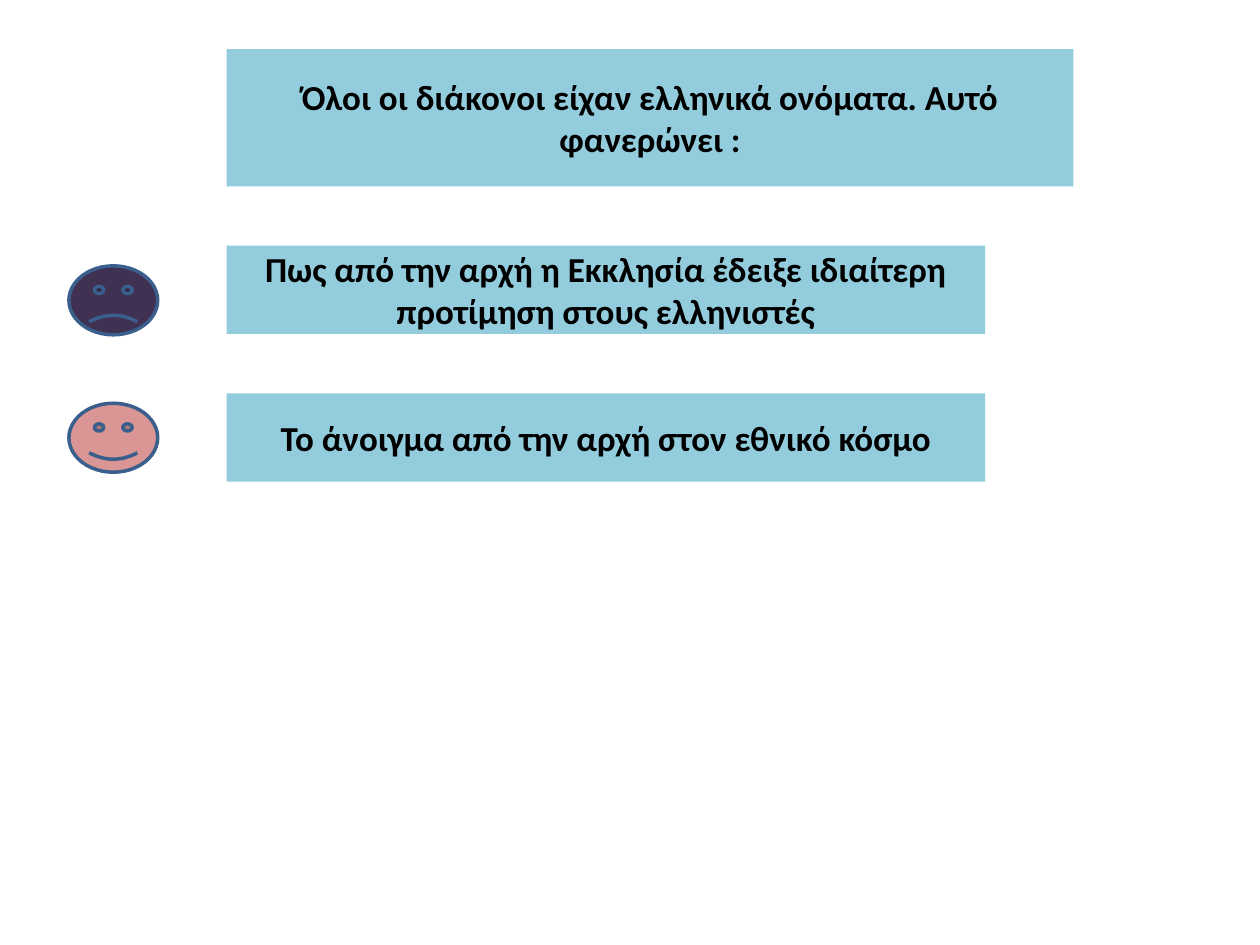
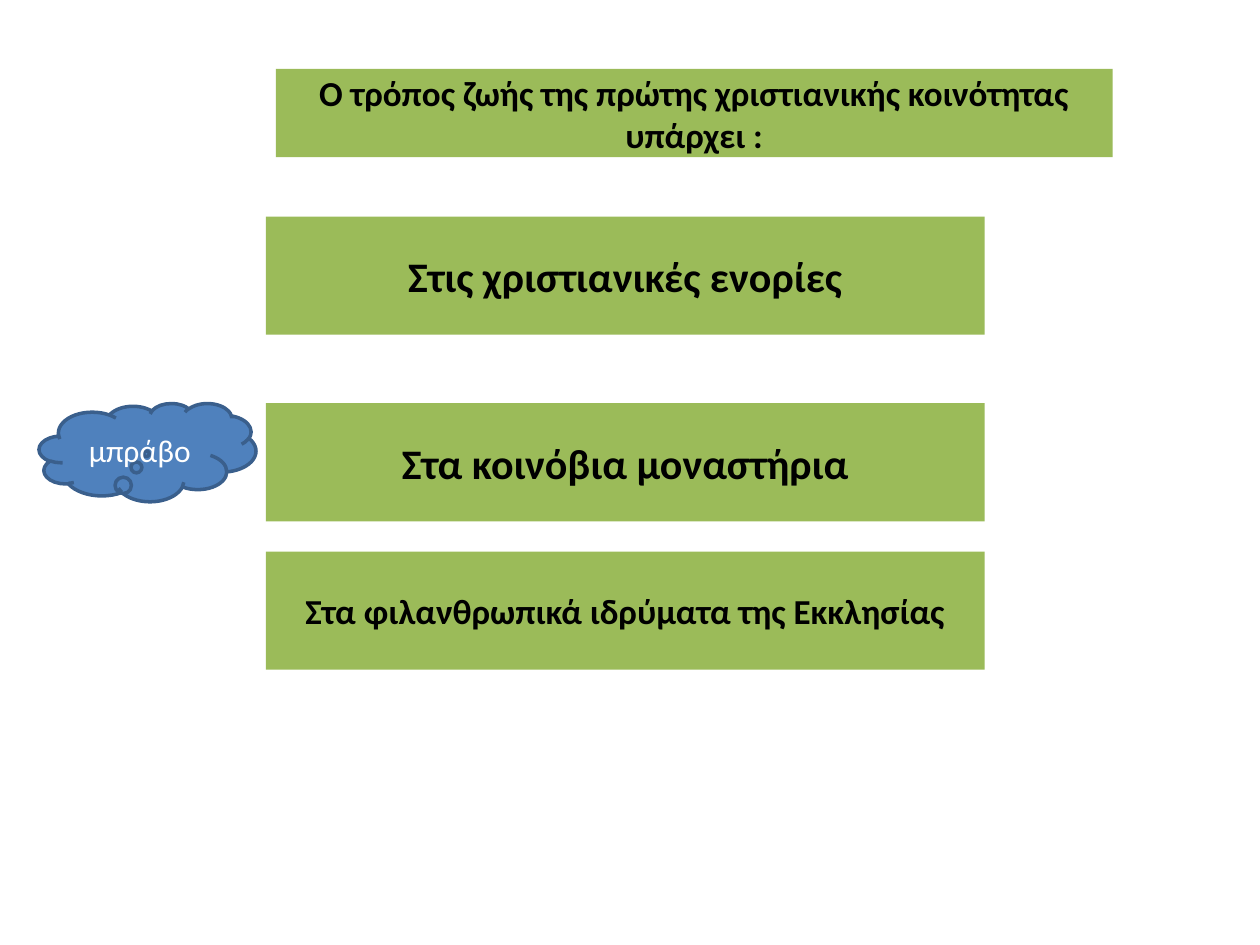
from dataclasses import dataclass

from pptx import Presentation
from pptx.dml.color import RGBColor
from pptx.enum.shapes import MSO_SHAPE
from pptx.enum.text import MSO_ANCHOR, MSO_AUTO_SIZE, PP_ALIGN
from pptx.util import Cm, Pt

RECT = MSO_SHAPE.RECTANGLE
SMILEY = MSO_SHAPE.SMILEY_FACE
CLOUD = MSO_SHAPE.CLOUD_CALLOUT
MIDDLE = MSO_ANCHOR.MIDDLE
CENTER = PP_ALIGN.CENTER
NO_FIT = MSO_AUTO_SIZE.NONE
TITLE_ONLY = 5


@dataclass(frozen=True)
class Theme:
    font: str = "Calibri"
    black: str = "000000"
    white: str = "FFFFFF"
    aqua: str = "93CDDD"
    green: str = "9BBB59"
    blue: str = "4F81BD"
    outline: str = "3A5F8C"
    rose: str = "D99694"
    plum: str = "403152"
    small: int = 18
    normal: int = 20
    large: int = 24
    outline_width: int = 2


THEME = Theme()


@dataclass(frozen=True)
class Box:
    left: float
    top: float
    width: float
    height: float


@dataclass(frozen=True)
class Answer:
    text: str
    top: float
    size: int = THEME.normal


@dataclass(frozen=True)
class Reaction:
    kind: MSO_SHAPE
    box: Box
    fill: str
    adjustments: tuple[float, ...] = ()
    text: str = ""


@dataclass(frozen=True)
class Question:
    title: str
    title_box: Box
    color: str
    column: Box
    answers: tuple[Answer, ...]
    reactions: tuple[Reaction, ...]


QUESTIONS = (
    Question(
        "Όλοι οι διάκονοι είχαν ελληνικά ονόματα. Αυτό φανερώνει :",
        Box(4.57, 0.99, 17.07, 2.77),
        THEME.aqua,
        Box(4.57, 4.95, 15.29, 1.78),
        (
            Answer("Πως από την αρχή η Εκκλησία έδειξε ιδιαίτερη "
                   "προτίμηση στους ελληνιστές", 4.95),
            Answer("Το άνοιγμα από την αρχή στον εθνικό κόσμο", 7.93),
        ),
        (
            Reaction(SMILEY, Box(1.39, 8.13, 1.79, 1.39), THEME.rose),
            Reaction(SMILEY, Box(1.39, 5.36, 1.79, 1.39), THEME.plum, (-0.047,)),
        ),
    ),
    Question(
        "Ο τρόπος ζωής της πρώτης χριστιανικής κοινότητας υπάρχει :",
        Box(5.56, 1.39, 16.87, 1.78),
        THEME.green,
        Box(5.36, 4.37, 14.49, 2.38),
        (
            Answer("Στις χριστιανικές ενορίες", 4.37, THEME.large),
            Answer("Στα κοινόβια μοναστήρια", 8.13, THEME.large),
            Answer("Στα φιλανθρωπικά ιδρύματα της Εκκλησίας", 11.12),
        ),
        (
            Reaction(CLOUD, Box(0.79, 8.13, 4.37, 1.98), THEME.blue,
                     (-0.005, 0.015), "μπράβο"),
        ),
    ),
)


def rgb(color: str) -> RGBColor:
    return RGBColor.from_string(color)


def place(sp, box: Box) -> None:
    sp.left, sp.top = Cm(box.left), Cm(box.top)
    sp.width, sp.height = Cm(box.width), Cm(box.height)


def paint(sp, color: str) -> None:
    sp.fill.solid()
    sp.fill.fore_color.rgb = rgb(color)


def write(sp, text: str, *, size: int = THEME.normal,
          color: str = THEME.black, bold: bool = True) -> None:
    tf = sp.text_frame
    tf.word_wrap = True
    tf.auto_size = NO_FIT
    tf.vertical_anchor = MIDDLE
    p = tf.paragraphs[0]
    p.alignment = CENTER
    r = p.add_run()
    r.text = text
    r.font.name = THEME.font
    r.font.size = Pt(size)
    r.font.bold = bold
    r.font.color.rgb = rgb(color)


def add_shape(s, kind: MSO_SHAPE, box: Box, fill: str):
    sp = s.shapes.add_shape(kind, 0, 0, 0, 0)
    place(sp, box)
    paint(sp, fill)
    sp.shadow.inherit = False
    return sp


def add_answer(s, question: Question, answer: Answer) -> None:
    column = question.column
    box = Box(column.left, answer.top, column.width, column.height)
    sp = add_shape(s, RECT, box, question.color)
    sp.line.fill.background()
    write(sp, answer.text, size=answer.size)


def add_reaction(s, reaction: Reaction) -> None:
    sp = add_shape(s, reaction.kind, reaction.box, reaction.fill)
    sp.line.color.rgb = rgb(THEME.outline)
    sp.line.width = Pt(THEME.outline_width)
    for i, value in enumerate(reaction.adjustments):
        sp.adjustments[i] = value
    if reaction.text:
        write(sp, reaction.text, size=THEME.small, color=THEME.white, bold=False)


def add_question(prs, question: Question) -> None:
    s = prs.slides.add_slide(prs.slide_layouts[TITLE_ONLY])
    title = s.shapes.title
    place(title, question.title_box)
    paint(title, question.color)
    write(title, question.title)
    for answer in question.answers:
        add_answer(s, question, answer)
    for reaction in question.reactions:
        add_reaction(s, reaction)


def main() -> None:
    prs = Presentation()
    prs.slide_width, prs.slide_height = Cm(25.4), Cm(19.05)
    for question in QUESTIONS:
        add_question(prs, question)
    prs.save("out.pptx")


if __name__ == "__main__":
    main()
